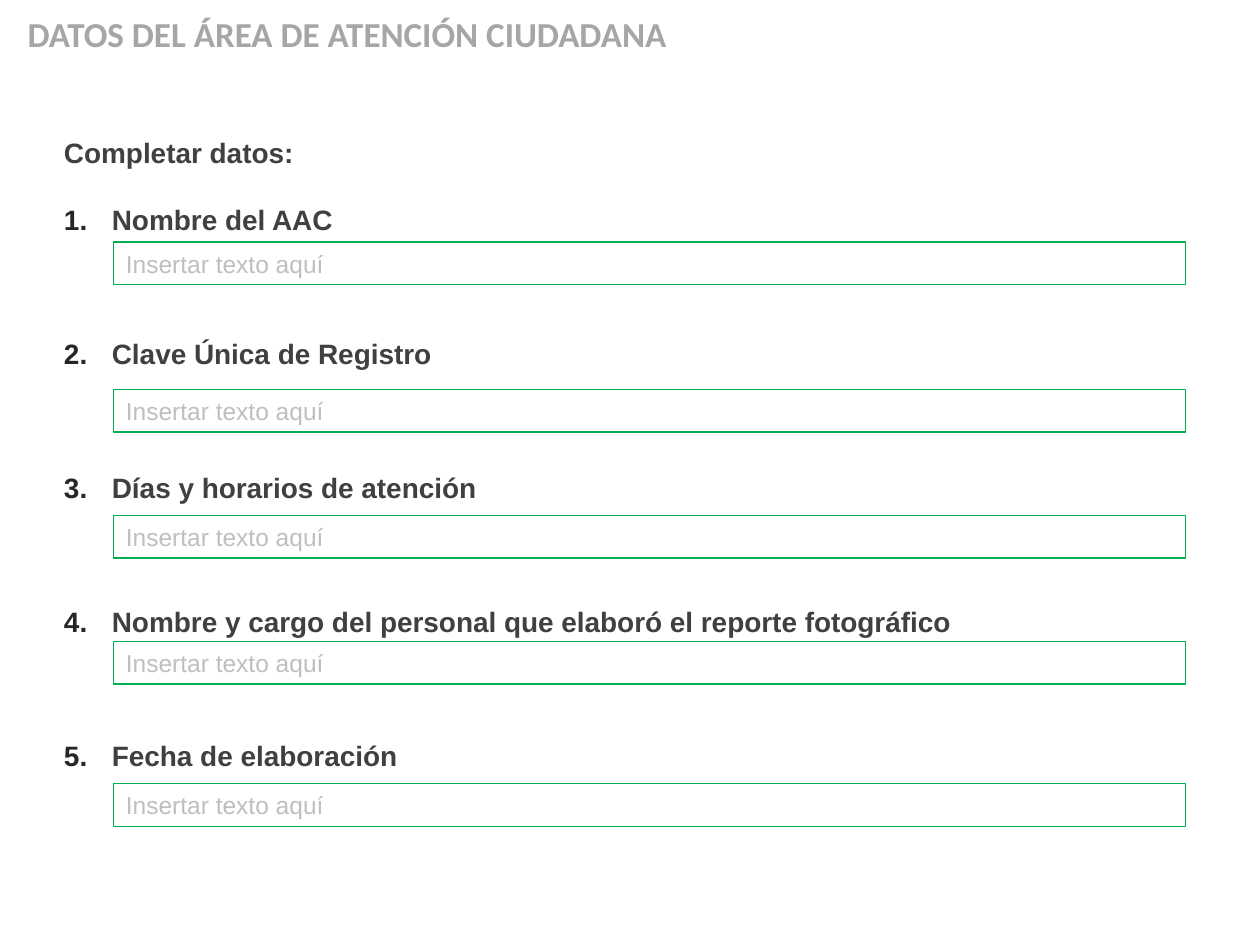
import pptx
import pptx.util
import pptx.dml.color
import pptx.enum.shapes
import pptx.enum.text
from lxml import etree
from pptx.oxml.ns import qn

Inches = pptx.util.Inches
Pt = pptx.util.Pt
RGBColor = pptx.dml.color.RGBColor

TITLE_GRAY = RGBColor(0xA6, 0xA6, 0xA6)
LABEL_GRAY = RGBColor(0x40, 0x40, 0x40)
HINT_GRAY = RGBColor(0xBF, 0xBF, 0xBF)
FIELD_GREEN = RGBColor(0x00, 0xB0, 0x50)
NUMBER_COLOR = "262626"

LABELS = [
    "Nombre del AAC",
    "Clave Única de Registro",
    "Días y horarios de atención",
    "Nombre y cargo del personal que elaboró el reporte fotográfico",
    "Fecha de elaboración",
]
FIELD_TOPS = [1.92, 3.09, 4.09, 5.09, 6.22]
LINE_PITCH = Pt(38.3)


def format_runs(paragraph, font_name, size, color, bold=False):
    for run in paragraph.runs:
        run.font.name = font_name
        run.font.size = Pt(size)
        run.font.color.rgb = color
        run.font.bold = bold


def number_paragraph(paragraph):
    """Give the paragraph an automatic number and a hanging indent."""
    properties = paragraph._p.get_or_add_pPr()
    properties.set("marL", str(Inches(0.38)))
    properties.set("indent", str(-Inches(0.38)))
    bullet_color = etree.SubElement(properties, qn("a:buClr"))
    etree.SubElement(bullet_color, qn("a:srgbClr"), val=NUMBER_COLOR)
    etree.SubElement(properties, qn("a:buFont"), typeface="+mj-lt")
    etree.SubElement(properties, qn("a:buAutoNum"), type="arabicPeriod")


def add_title(slide, left, top, width, height):
    shape = slide.shapes.add_textbox(left, top, width, height)
    shape.text_frame.word_wrap = True
    shape.text_frame.text = "DATOS DEL ÁREA DE ATENCIÓN CIUDADANA"
    format_runs(shape.text_frame.paragraphs[0], "Calibri", 20, TITLE_GRAY, True)


def add_labels(slide, left, top, width, height):
    text_frame = slide.shapes.add_textbox(left, top, width, height).text_frame
    text_frame.word_wrap = True
    text_frame.text = "\n".join(["Completar datos:"] + LABELS)
    for index, paragraph in enumerate(text_frame.paragraphs):
        paragraph.line_spacing = LINE_PITCH
        # One free line between numbered items
        if index > 1:
            paragraph.space_before = LINE_PITCH
        if index > 0:
            number_paragraph(paragraph)
        format_runs(paragraph, "Arial", 16, LABEL_GRAY, True)


def add_field(slide, left, top, width, height):
    shape = slide.shapes.add_shape(
        pptx.enum.shapes.MSO_SHAPE.RECTANGLE, left, top, width, height)
    shape.shadow.inherit = False
    shape.fill.background()
    shape.line.color.rgb = FIELD_GREEN
    shape.line.width = Pt(0.75)
    text_frame = shape.text_frame
    text_frame.word_wrap = True
    text_frame.vertical_anchor = pptx.enum.text.MSO_ANCHOR.MIDDLE
    text_frame.text = "Insertar texto aquí"
    paragraph = text_frame.paragraphs[0]
    paragraph.alignment = pptx.enum.text.PP_ALIGN.LEFT
    format_runs(paragraph, "Arial", 14, HINT_GRAY)


def main():
    presentation = pptx.Presentation()
    presentation.slide_width = Inches(10)
    presentation.slide_height = Inches(7.5)
    slide = presentation.slides.add_slide(presentation.slide_layouts[6])

    # Numbered labels, heading, then one field for each label
    add_labels(slide, Inches(0.41), Inches(0.76), Inches(7.33), Inches(5.49))
    add_title(slide, Inches(0.12), Inches(0.05), Inches(8.78), Inches(0.44))
    for top in FIELD_TOPS:
        add_field(slide, Inches(0.9), Inches(top), Inches(8.51), Inches(0.34))

    presentation.save("out.pptx")


if __name__ == "__main__":
    main()
